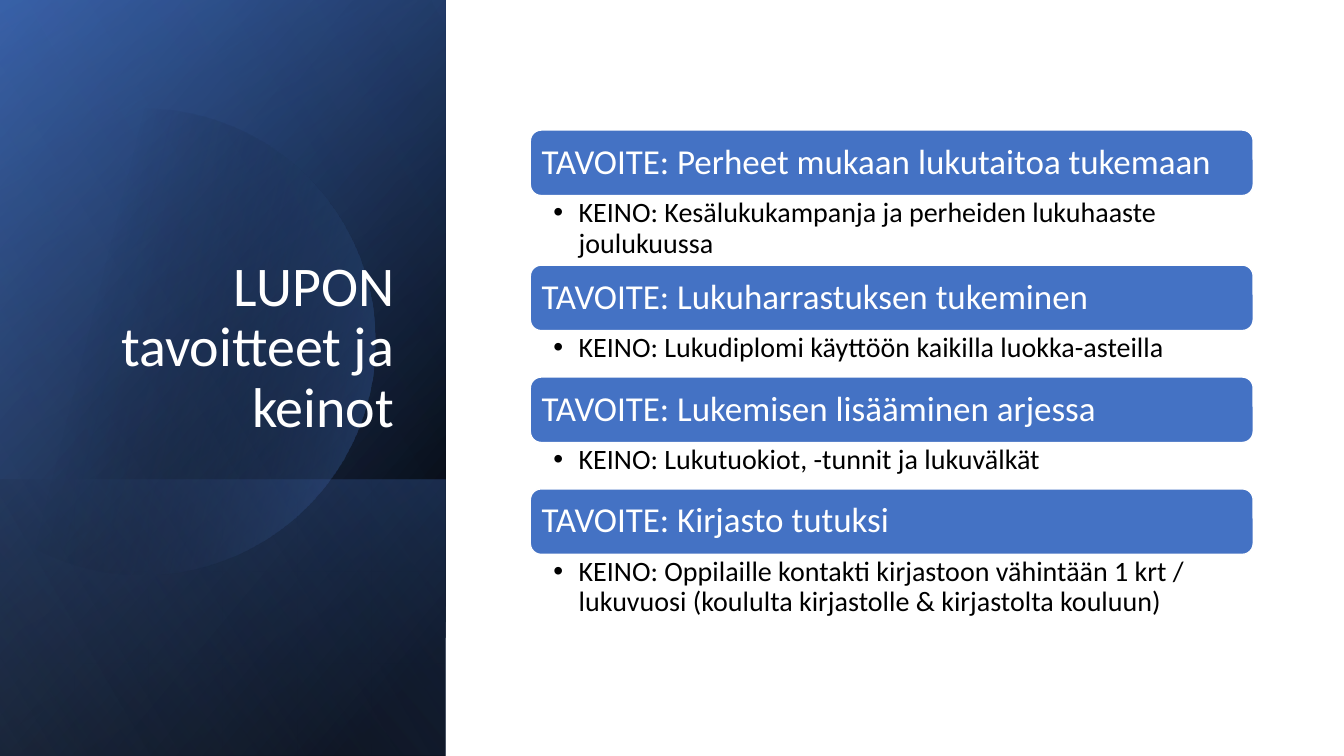
"""Build a slide of reading goals and the means to reach them."""
from math import acos, cos, sin
from pptx import Presentation
from pptx.dml.color import RGBColor
from pptx.enum.shapes import MSO_SHAPE
from pptx.enum.text import MSO_ANCHOR, MSO_AUTO_SIZE, PP_ALIGN
from pptx.oxml import parse_xml
from pptx.oxml.ns import nsdecls, qn
from pptx.util import Inches, Pt

TITLE = "LUPON tavoitteet ja keinot"
GOALS = [
    ("TAVOITE: Perheet mukaan lukutaitoa tukemaan",
     "KEINO: Kesälukukampanja ja perheiden lukuhaaste joulukuussa", 0.69),
    ("TAVOITE: Lukuharrastuksen tukeminen",
     "KEINO: Lukudiplomi käyttöön kaikilla luokka-asteilla", 0.46),
    ("TAVOITE: Lukemisen lisääminen arjessa",
     "KEINO: Lukutuokiot, -tunnit ja lukuvälkät", 0.46),
    ("TAVOITE: Kirjasto tutuksi",
     "KEINO: Oppilaille kontakti kirjastoon vähintään 1 krt / lukuvuosi "
     "(koululta kirjastolle & kirjastolta kouluun)", 0.69),
]
WIDE, HIGH, SIDE = 13.33, 7.5, 4.42
LEFT, TOP, SPAN, BAR = 5.26, 1.29, 7.17, 0.65
LOW = 4.76
MID_X, MID_Y, RAD, STEPS = 1.41, 3.39, 2.31, 120
BASE = (0, 220, [(8, "000000", 100), (100, "2F5597", 100)])
GLOW = (0, 240, [(0, "000000", 0), (99, "4472C4", 46)])
FOOT = (LOW, 140, [(2, "4472C4", 29), (100, "000000", 30)])
DISC = (14, [(29, "000000", 0), (100, "4472C4", 43)])
HAZE = (0, 150, [(0, "000000", 0), (99, "8FAADC", 11)])


def color(code):
    return RGBColor.from_string(code)


def blend(shape, angle, stops):
    shape.shadow.inherit = False
    shape.line.fill.background()
    shape.fill.solid()
    marks = "".join(
        f'<a:gs pos="{pos * 1000}"><a:srgbClr val="{code}">'
        f'<a:alpha val="{alpha * 1000}"/></a:srgbClr></a:gs>'
        for pos, code, alpha in stops)
    grad = parse_xml(
        f'<a:gradFill {nsdecls("a")} rotWithShape="1"><a:gsLst>{marks}</a:gsLst>'
        f'<a:lin ang="{angle * 60000}" scaled="0"/></a:gradFill>')
    props = shape._element.spPr
    props.replace(props.find(qn("a:solidFill")), grad)


def panel(shapes, top, angle, stops):
    rect = shapes.add_shape(MSO_SHAPE.RECTANGLE, 0, Inches(top),
                            Inches(SIDE), Inches(HIGH - top))
    blend(rect, angle, stops)


def disc(shapes, angle, stops):
    edge = acos(-MID_X / RAD)
    turns = [edge * (2 * i / STEPS - 1) for i in range(STEPS + 1)]
    dots = [(Inches(max(0, MID_X + RAD * cos(t))), Inches(MID_Y + RAD * sin(t)))
            for t in turns]
    form = shapes.build_freeform(*dots[0], scale=1.0)
    form.add_line_segments(dots[1:], close=True)
    blend(form.convert_to_shape(), angle, stops)


def write(shape, text, size, code, align, anchor, pads=(0.1, 0.05, 0.1, 0.05)):
    frame = shape.text_frame
    frame.text = text
    frame.word_wrap = True
    frame.auto_size = MSO_AUTO_SIZE.NONE
    frame.vertical_anchor = anchor
    (frame.margin_left, frame.margin_top,
     frame.margin_right, frame.margin_bottom) = map(Inches, pads)
    para = frame.paragraphs[0]
    para.alignment = align
    para.line_spacing = 0.9
    font = para.runs[0].font
    font.name, font.size = "Calibri", Pt(size)
    font.color.rgb = color(code)
    return para


def goal(shapes, top, text):
    bar = shapes.add_shape(MSO_SHAPE.ROUNDED_RECTANGLE, Inches(LEFT), Inches(top),
                           Inches(SPAN), Inches(BAR))
    bar.shadow.inherit = False
    bar.fill.solid()
    bar.fill.fore_color.rgb = color("4472C4")
    bar.line.color.rgb = color("FFFFFF")
    bar.line.width = Pt(1)
    write(bar, text, 25, "FFFFFF", PP_ALIGN.LEFT, MSO_ANCHOR.MIDDLE,
          (0.08, 0.1, 0.08, 0.1))


def means(shapes, top, text, tall):
    box = shapes.add_textbox(Inches(LEFT), Inches(top), Inches(SPAN), Inches(tall))
    para = write(box, text, 20, "000000", PP_ALIGN.LEFT, MSO_ANCHOR.TOP,
                 (0.23, 0.03, 0.19, 0.03))
    props = para._p.get_or_add_pPr()
    props.set("marL", str(Inches(0.25)))
    props.set("indent", str(-Inches(0.25)))
    props.append(parse_xml(f'<a:buFont {nsdecls("a")} typeface="Arial"/>'))
    props.append(parse_xml(f'<a:buChar {nsdecls("a")} char="•"/>'))


def main():
    deck = Presentation()
    deck.slide_width, deck.slide_height = Inches(WIDE), Inches(HIGH)
    shapes = deck.slides.add_slide(deck.slide_layouts[5]).shapes
    for part in (BASE, GLOW, FOOT):
        panel(shapes, *part)
    disc(shapes, *DISC)
    panel(shapes, *HAZE)

    title = shapes.title
    title.left, title.top = Inches(0.51), Inches(0.71)
    title.width, title.height = Inches(3.5), Inches(3.7)
    write(title, TITLE, 40, "FFFFFF", PP_ALIGN.RIGHT, MSO_ANCHOR.BOTTOM)
    shapes._spTree.append(title._element)

    top = TOP
    for aim, way, tall in GOALS:
        goal(shapes, top, aim)
        means(shapes, top + BAR, way, tall)
        top += BAR + tall
    deck.save("out.pptx")


if __name__ == "__main__":
    main()
